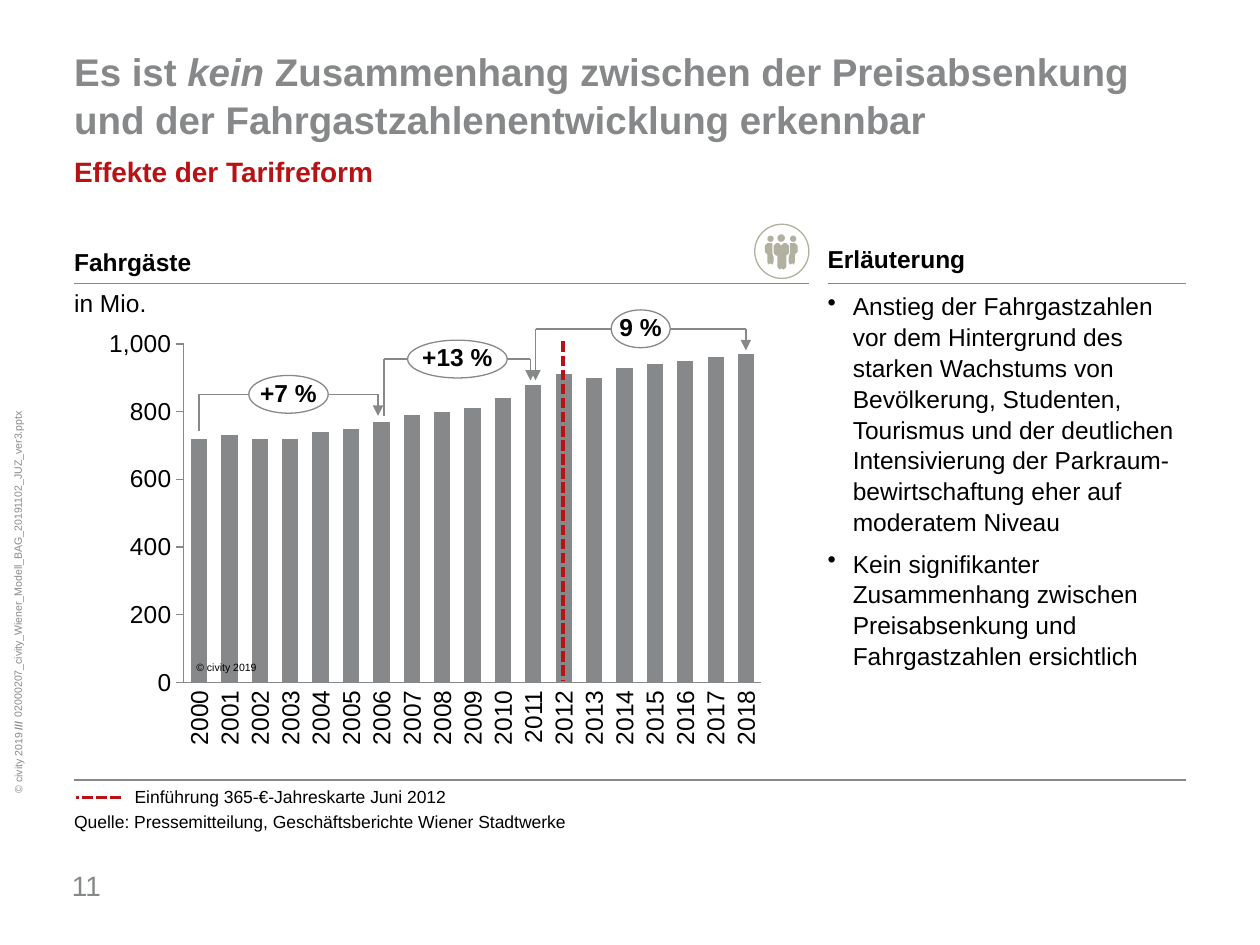
from dataclasses import dataclass

from lxml import etree
from pptx import Presentation
from pptx import util as u
from pptx.chart import data as chart_data
from pptx.dml.color import RGBColor
from pptx.enum import chart as charts, dml, shapes, text
from pptx.oxml.ns import qn


@dataclass(frozen=True)
class Theme:
    font: str = "Arial"
    black: RGBColor = RGBColor(0, 0, 0)
    white: RGBColor = RGBColor(255, 255, 255)
    grey: RGBColor = RGBColor.from_string("868889")
    red: RGBColor = RGBColor.from_string("B91215")
    sand: RGBColor = RGBColor.from_string("B1B0A1")
    title: u.Pt = u.Pt(22)
    subtitle: u.Pt = u.Pt(16)
    body: u.Pt = u.Pt(14)
    note: u.Pt = u.Pt(10)
    tiny: u.Pt = u.Pt(6)


theme = Theme()
presentation = Presentation()
presentation.slide_width, presentation.slide_height = u.Inches(10), u.Inches(7.5)
slide = presentation.slides.add_slide(presentation.slide_layouts[6])

TOP, MIDDLE = text.MSO_ANCHOR.TOP, text.MSO_ANCHOR.MIDDLE
LEFT, CENTER, RIGHT = text.PP_ALIGN.LEFT, text.PP_ALIGN.CENTER, text.PP_ALIGN.RIGHT
OVAL = shapes.MSO_SHAPE.OVAL
NO_MARGINS = {f"margin_{side}": 0 for side in ("left", "top", "right", "bottom")}


def write(target, paragraphs, size, color=theme.black, bold=False, frame=None, layout=None):
    """Fill a shape, or a new text box at the given inches; a run is (text, font changes)."""
    if isinstance(target, tuple):
        target = slide.shapes.add_textbox(*map(u.Inches, target))
    text_frame = target.text_frame
    frame_format = {"word_wrap": True, "vertical_anchor": TOP, **(frame or {})}
    for name, value in frame_format.items():
        setattr(text_frame, name, value)
    for index, runs in enumerate(paragraphs):
        paragraph = text_frame.add_paragraph() if index else text_frame.paragraphs[0]
        paragraph_format = {"alignment": LEFT, **(layout or {})}
        if index:
            paragraph_format["space_before"] = u.Pt(6)
        for name, value in paragraph_format.items():
            setattr(paragraph, name, value)
        for words, changes in runs:
            run = paragraph.add_run()
            run.text = words
            run.font.color.rgb = color
            font_format = {"name": theme.font, "size": size, "bold": bold, **changes}
            for name, value in font_format.items():
                setattr(run.font, name, value)
    return target


def add_line(x1, y1, x2, y2, color=theme.grey, width=0.75, dashed=False, arrow=False):
    line = slide.shapes.add_connector(
        shapes.MSO_CONNECTOR.STRAIGHT, *map(u.Inches, (x1, y1, x2, y2)))
    line.line.color.rgb = color
    line.line.width = u.Pt(width)
    if dashed:
        line.line.dash_style = dml.MSO_LINE.SQUARE_DOT
    if arrow:
        etree.SubElement(line.line._get_or_add_ln(), qn("a:tailEnd"), type="triangle")
    etree.SubElement(line._element.spPr, qn("a:effectLst"))


painted = []  # (shape, fill colour, line colour)

# Copyright and file name along the left edge
for box, runs, alignment in (
    ((-1.85, 3.65, 3.98, 0.1),
     [("02000207_civity_Wiener_Modell_BAG_20191102_JUZ_ver3.pptx", {})], LEFT),
    ((-0.18, 6, 0.65, 0.1), [("© civity 2019", {}), (" ///", {"bold": True})], RIGHT),
):
    edge_note = write(box, [runs], theme.tiny, theme.grey, frame=NO_MARGINS,
                      layout={"alignment": alignment})
    edge_note.rotation = 270

# Title, subtitle and page number
write((0.49, 0.31, 8.92, 0.71),
      [[("Es ist ", {}), ("kein", {"italic": True}),
        (" Zusammenhang zwischen der Preisabsenkung und der "
         "Fahrgastzahlenentwicklung erkennbar", {})]],
      theme.title, theme.grey, bold=True, layout={"line_spacing": 1.05})
write((0.49, 1.18, 7.26, 0.32), [[("Effekte der Tarifreform", {})]],
      theme.subtitle, theme.red, bold=True)
write((0.57, 6.89, 0.25, 0.27), [[("11", {})]], theme.subtitle, theme.grey,
      frame={**NO_MARGINS, "word_wrap": False, "vertical_anchor": MIDDLE})

# Explanation with bullets
explanation = slide.shapes.add_shape(
    shapes.MSO_SHAPE.RECTANGLE, *map(u.Inches, (6.47, 2.25, 3.04, 4.09)))
painted.append((explanation, theme.white, None))
write(explanation,
      [[("Anstieg der Fahrgastzahlen vor dem Hintergrund des starken Wachstums von "
         "Bevölkerung, Studenten, Tourismus und der deutlichen Intensivierung der "
         "Parkraum-bewirtschaftung eher auf moderatem Niveau", {})],
       [("Kein signifikanter Zusammenhang zwischen Preisabsenkung und "
         "Fahrgastzahlen ersichtlich", {})]],
      theme.body, layout={"line_spacing": 1.05})
for paragraph in explanation.text_frame.paragraphs:
    properties = paragraph._p.get_or_add_pPr()
    properties.set("marL", str(u.Inches(0.2)))
    properties.set("indent", str(u.Inches(-0.2)))
    etree.SubElement(properties, qn("a:buChar"), char="•")

# Column headings with rules
write((0.49, 1.9, 5.3, 0.39), [[("Fahrgäste", {"bold": True})], [("in Mio.", {})]],
      theme.body, layout={"line_spacing": 1.05})
write((6.47, 1.86, 2.94, 0.39), [[("Erläuterung", {})]], theme.body, bold=True,
      frame={"vertical_anchor": MIDDLE})
for left, right, y in ((0.59, 6.42, 2.25), (6.57, 9.41, 2.25), (0.59, 9.41, 6.19)):
    add_line(left, y, right, y)

# Passenger chart
passengers = [720, 730, 720, 720, 740, 750, 770, 790, 800, 810,
              840, 880, 910, 900, 930, 940, 950, 960, 970]
data = chart_data.CategoryChartData()
data.categories = [str(number + 1) for number in range(len(passengers))]
data.add_series("Series 1", passengers)
chart = slide.shapes.add_chart(
    charts.XL_CHART_TYPE.COLUMN_STACKED,
    *map(u.Inches, (0.68, 2.59, 5.45, 2.97)), data).chart
chart.has_legend = chart.has_title = False
chart.font.name, chart.font.size = theme.font, theme.note
chart.font.color.rgb = theme.black
plot = chart.plots[0]
plot.gap_width, plot.overlap, plot.vary_by_categories = 87, 100, False
bars = plot.series[0].format.fill
bars.solid()
bars.fore_color.rgb = theme.grey

axis_formats = (
    (chart.category_axis, {"major_tick_mark": charts.XL_TICK_MARK.NONE,
                           "tick_label_position": charts.XL_TICK_LABEL_POSITION.NONE}),
    (chart.value_axis, {"major_tick_mark": charts.XL_TICK_MARK.OUTSIDE,
                        "minimum_scale": 0, "maximum_scale": 1000, "major_unit": 200}),
)
for axis, axis_format in axis_formats:
    axis_format |= {"has_major_gridlines": False, "minor_tick_mark": charts.XL_TICK_MARK.NONE}
    for name, value in axis_format.items():
        setattr(axis, name, value)
    axis.format.line.color.rgb = theme.grey
    axis.format.line.width = u.Pt(0.75)
labels = chart.value_axis.tick_labels
labels.number_format, labels.number_format_is_linked = '#,##0;"-"#,##0', False
labels.font.name, labels.font.size = theme.font, theme.body
labels.font.color.rgb = theme.black

plot_area = chart.element.find(".//" + qn("c:plotArea"))
for old_layout in plot_area.findall(qn("c:layout")):
    plot_area.remove(old_layout)
plot_layout = etree.Element(qn("c:layout"))
manual = etree.SubElement(plot_layout, qn("c:manualLayout"))
for tag, value in (("layoutTarget", "inner"), ("xMode", "edge"), ("yMode", "edge"),
                   ("x", "0.143"), ("y", "0.047"), ("w", "0.841"), ("h", "0.905")):
    etree.SubElement(manual, qn("c:" + tag), val=value)
plot_area.insert(0, plot_layout)

# Year labels under the bars
for index in range(len(passengers)):
    year = write((1.46 + index * 0.241, 5.48, 0.23, 0.43), [[(str(2000 + index), {})]],
                 theme.body, layout={"alignment": RIGHT},
                 frame={**NO_MARGINS, "word_wrap": False, "vertical_anchor": MIDDLE})
    year.text_frame._txBody.bodyPr.set("vert", "vert270")

# Growth brackets, each with an oval in the middle
for label, left, right, y, foot, both_arrows, width in (
    ("+7 %", 1.58, 3, 3.13, 3.42, False, 0.63),
    ("+13 %", 3.05, 4.21, 2.85, 3.3, False, 0.79),
    ("9 %", 4.25, 5.92, 2.61, 3.02, True, 0.47),
):
    add_line(left, y, right, y, width=1)
    add_line(left, y, left, foot, width=1, arrow=both_arrows)
    add_line(right, y, right, y + 0.17, width=1, arrow=True)
    oval = slide.shapes.add_shape(
        OVAL, *map(u.Inches, ((left + right - width) / 2, y - 0.15, width, 0.3)))
    painted.append((oval, theme.white, theme.grey))
    write(oval, [[(label, {})]], theme.body, bold=True,
          frame={**NO_MARGINS, "word_wrap": False, "vertical_anchor": MIDDLE},
          layout={"alignment": CENTER, "line_spacing": 0.9})

# Passenger icon: three figures in a ring
icon = slide.shapes.add_group_shape().shapes
side_figure = [(613, 201), (613, 193), (609, 193), (607, 195), (607, 200), (609, 202), (609, 208),
               (610, 210), (611, 209), (613, 210), (614, 208), (614, 204)]
middle_figure = [(624, 203), (626, 201), (626, 195), (624, 193), (622, 193), (620, 195),
                 (618, 193), (616, 193), (614, 195), (614, 201), (616, 203), (617, 203),
                 (617, 212), (619, 214), (620, 213), (622, 214), (624, 212)]
for outline in (side_figure, [(1240 - x, y) for x, y in side_figure], middle_figure):
    builder = icon.build_freeform(*outline[0], scale=u.Inches(0.01))
    builder.add_line_segments(outline[1:], close=True)
    painted.append((builder.convert_to_shape(), theme.sand, None))
for left, top, size, fill, line in (
    (6.09, 1.87, 0.05, theme.sand, None), (6.27, 1.87, 0.05, theme.sand, None),
    (6.17, 1.86, 0.06, theme.sand, None), (5.99, 1.78, 0.43, None, theme.sand),
):
    circle = icon.add_shape(OVAL, *map(u.Inches, (left, top, size, size)))
    painted.append((circle, fill, line))

# Tariff reform marker, its legend and the source
add_line(4.47, 2.71, 4.47, 5.4, theme.red, 2, dashed=True)
add_line(0.96, 6.33, 0.6, 6.33, theme.red, 2, dashed=True)
write((1.46, 5.2, 0.69, 0.2), [[("© civity 2019", {})]], theme.tiny,
      frame={"word_wrap": False})
write((0.97, 6.19, 4.59, 0.27), [[("Einführung 365-€-Jahreskarte Juni 2012", {})]],
      theme.note, frame={"vertical_anchor": MIDDLE})
write((0.49, 6.39, 8.93, 0.27),
      [[("Quelle: Pressemitteilung, Geschäftsberichte Wiener Stadtwerke", {})]], theme.note)

# Fills and outlines
for shape, fill, line in painted:
    shape.shadow.inherit = False
    for part, color in ((shape.fill, fill), (shape.line.fill, line)):
        if color is None:
            part.background()
        else:
            part.solid()
            part.fore_color.rgb = color
    if line is not None:
        shape.line.width = u.Pt(0.75)

presentation.save("out.pptx")
